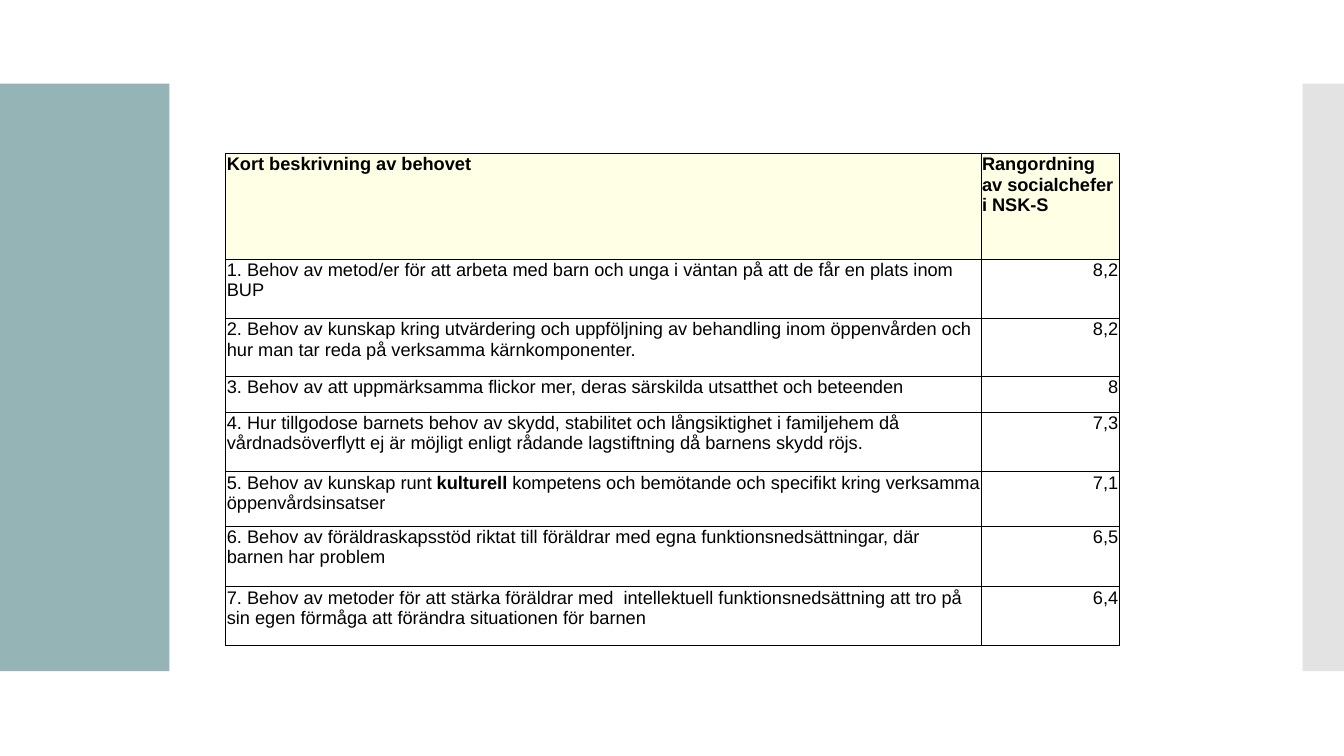
from dataclasses import dataclass

from lxml import etree
from pptx import Presentation
from pptx.dml.color import RGBColor
from pptx.enum import shapes, text
from pptx.oxml import ns
from pptx.util import Inches, Pt


@dataclass(frozen=True)
class Theme:
    font: str = "Arial"
    size: float = 13
    ink: str = "000000"
    paper: str = "FFFFFF"
    header: str = "FFFFE5"
    teal: str = "94B4B6"
    grey: str = "C8C8C8"
    outer_line: float = 1
    inner_line: float = 0.5


HEADERS = ("Kort beskrivning av behovet", "Rangordning av socialchefer i NSK-S")
BOLD_WORD = "kulturell"
# Need, rank, row height in inches
NEEDS = [
    ("Behov av metod/er för att arbeta med barn och unga i väntan på att de får en plats inom BUP",
     "8,2", 0.59),
    ("Behov av kunskap kring utvärdering och uppföljning av behandling inom öppenvården och "
     "hur man tar reda på verksamma kärnkomponenter.", "8,2", 0.57),
    ("Behov av att uppmärksamma flickor mer, deras särskilda utsatthet och beteenden",
     "8", 0.36),
    ("Hur tillgodose barnets behov av skydd, stabilitet och långsiktighet i familjehem då "
     "vårdnadsöverflytt ej är möjligt enligt rådande lagstiftning då barnens skydd röjs.",
     "7,3", 0.59),
    ("Behov av kunskap runt kulturell kompetens och bemötande och specifikt kring verksamma "
     "öppenvårdsinsatser", "7,1", 0.54),
    ("Behov av föräldraskapsstöd riktat till föräldrar med egna funktionsnedsättningar, där "
     "barnen har problem", "6,5", 0.6),
    ("Behov av metoder för att stärka föräldrar med  intellektuell funktionsnedsättning att "
     "tro på sin egen förmåga att förändra situationen för barnen", "6,4", 0.58),
]
COLUMN_WIDTHS = (7.49, 1.37)
HEADER_HEIGHT = 1.05


class SlideBuilder:
    def __init__(self, page, theme):
        self.page = page
        self.theme = theme

    def band(self, left, width, color, alpha=100):
        """Add a vertical side band; alpha is its opacity in percent."""
        box = self.page.shapes.add_shape(
            shapes.MSO_SHAPE.RECTANGLE,
            Inches(left), Inches(0.83), Inches(width), Inches(5.83))
        box.shadow.inherit = False
        box.line.fill.background()
        box.fill.solid()
        box.fill.fore_color.rgb = RGBColor.from_string(color)
        if alpha < 100:
            tint = box.element.spPr.find(f".//{ns.qn('a:srgbClr')}")
            etree.SubElement(tint, ns.qn("a:alpha"), val=str(alpha * 1000))

    def table(self, left, top, widths, heights, rows):
        frame = self.page.shapes.add_table(
            len(rows), len(widths), Inches(left), Inches(top),
            Inches(sum(widths)), Inches(sum(heights)))
        grid = frame.table
        grid.first_row = grid.horz_banding = False
        for column, width in zip(grid.columns, widths):
            column.width = Inches(width)
        for row, height in zip(grid.rows, heights):
            row.height = Inches(height)
        for r, row in enumerate(rows):
            for c, wording in enumerate(row):
                self.cell(grid.cell(r, c), wording, is_header=r == 0,
                          is_first=c == 0, is_last=c == len(widths) - 1)

    def cell(self, cell, wording, is_header, is_first, is_last):
        theme = self.theme
        cell.margin_left = cell.margin_right = cell.margin_top = Inches(0.01)
        cell.margin_bottom = 0
        self.borders(cell, L=is_first, R=is_last, T=is_header, B=False)
        cell.fill.solid()
        cell.fill.fore_color.rgb = RGBColor.from_string(
            theme.header if is_header else theme.paper)
        para = cell.text_frame.paragraphs[0]
        if is_last and not is_header:
            para.alignment = text.PP_ALIGN.RIGHT
        before, bold_word, after = wording.partition(BOLD_WORD)
        for part in filter(None, (before, bold_word, after)):
            span = para.add_run()
            span.text = part
            span.font.name = theme.font
            span.font.size = Pt(theme.size)
            span.font.bold = is_header or part == BOLD_WORD
            span.font.color.rgb = RGBColor.from_string(theme.ink)

    def borders(self, cell, **outer_sides):
        """Draw each side, heavier where its flag marks the table's edge."""
        properties = cell._tc.get_or_add_tcPr()
        for side, is_outer in outer_sides.items():
            width = self.theme.outer_line if is_outer else self.theme.inner_line
            line = etree.SubElement(properties, ns.qn(f"a:ln{side}"), w=str(Pt(width)))
            fill = etree.SubElement(line, ns.qn("a:solidFill"))
            etree.SubElement(fill, ns.qn("a:srgbClr"), val=self.theme.ink)


def main():
    deck = Presentation()
    deck.slide_width, deck.slide_height = Inches(13.33), Inches(7.5)
    theme = Theme()
    builder = SlideBuilder(deck.slides.add_slide(deck.slide_layouts[6]), theme)
    builder.band(0, 1.68, theme.teal)
    builder.band(12.92, 0.41, theme.grey, alpha=50)
    rows = [HEADERS] + [(f"{number}. {need}", rank)
                        for number, (need, rank, _) in enumerate(NEEDS, 1)]
    heights = [HEADER_HEIGHT] + [height for _, _, height in NEEDS]
    builder.table(2.24, 1.52, COLUMN_WIDTHS, heights, rows)
    deck.save("out.pptx")


if __name__ == "__main__":
    main()
